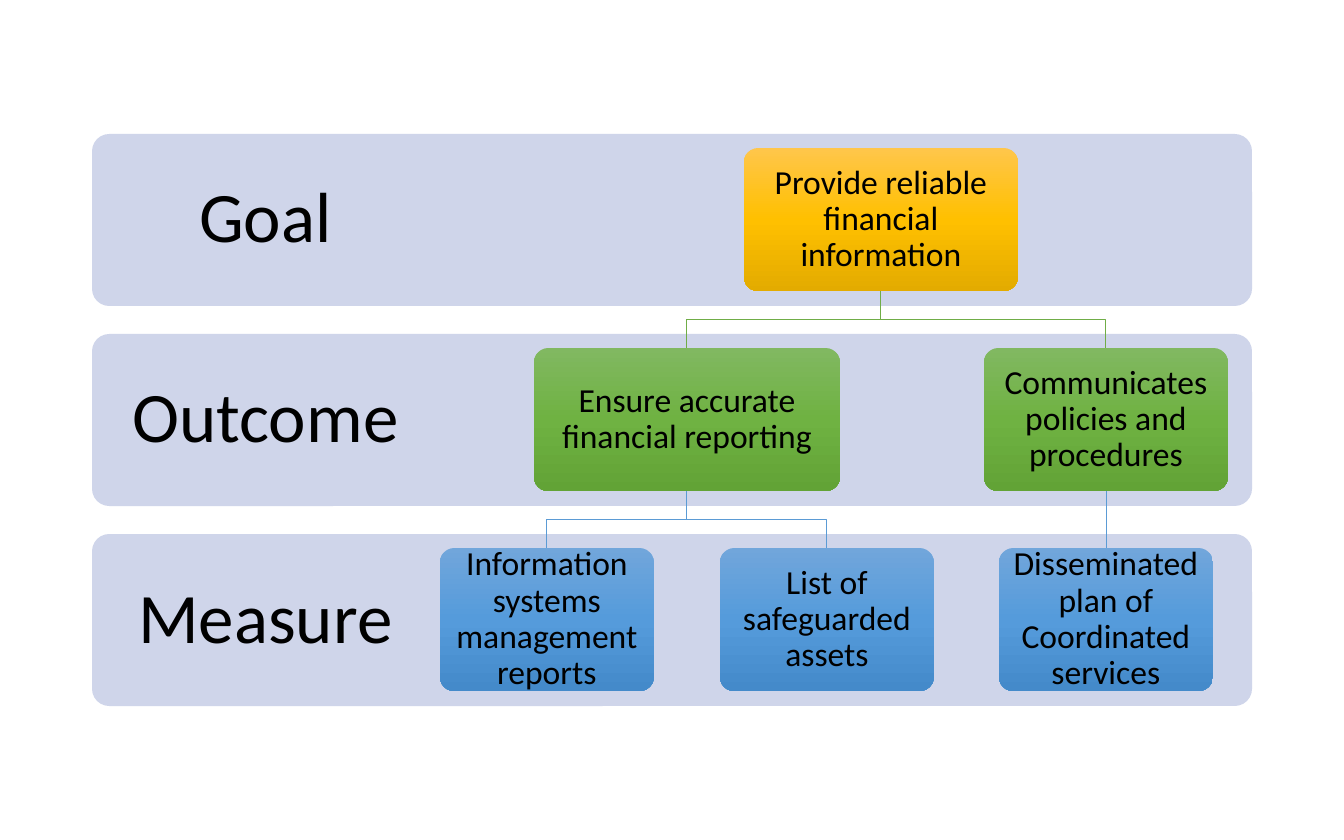
from copy import deepcopy

from lxml.etree import SubElement
from pptx import Presentation
from pptx.dml.color import RGBColor
from pptx.enum.shapes import MSO_CONNECTOR, MSO_SHAPE
from pptx.enum.text import MSO_ANCHOR, PP_ALIGN
from pptx.oxml.ns import qn
from pptx.util import Emu, Pt

EMU_PER_PX = 914400 / 134.4
COLORS = {"band": "CFD5EA", "text": "000000", "outcome_line": "70AD47", "measure_line": "5B9BD5"}
GRADIENTS = {
    "goal": ("FFC64B", "FFC000", "E3AB00"),
    "outcome": ("81B861", "6FB242", "62A336"),
    "measure": ("71A6DB", "559BDB", "448ACA"),
}

# Row geometry in px
BAND_LEFT, BAND_TOP, BAND_WIDTH, BAND_HEIGHT = 92, 134, 1160, 172
LABEL_WIDTH = 347
ROW_PITCH = 200
BOX_TOP, BOX_HEIGHT = 148, 143
LEVELS = ["goal", "outcome", "measure"]

# key: (level, centre x, width, text)
BOXES = {
    "information": ("goal", 881, 274, "Provide reliable financial information"),
    "reporting": ("outcome", 687, 306, "Ensure accurate financial reporting"),
    "policies": ("outcome", 1106, 244, "Communicates policies and procedures"),
    "reports": ("measure", 547, 214, "Information systems management reports"),
    "assets": ("measure", 827, 214, "List of safeguarded assets"),
    "plan": ("measure", 1106, 214, "Disseminated plan of Coordinated services"),
}
LINKS = [
    ("information", "reporting"), ("information", "policies"),
    ("reporting", "reports"), ("reporting", "assets"), ("policies", "plan"),
]


def px(value):
    return Emu(round(value * EMU_PER_PX))


def rgb(name):
    return RGBColor.from_string(COLORS[name])


def add_rounded(slide, left, top, width, height):
    rounded = slide.shapes.add_shape(
        MSO_SHAPE.ROUNDED_RECTANGLE, px(left), px(top), px(width), px(height))
    rounded.adjustments[0] = 0.1
    rounded.shadow.inherit = False
    rounded.line.fill.background()
    return rounded


def write_text(frame, text, size, inset):
    frame.word_wrap = True
    frame.vertical_anchor = MSO_ANCHOR.MIDDLE
    frame.margin_left = frame.margin_right = px(inset)
    frame.margin_top = frame.margin_bottom = px(inset)
    paragraph = frame.paragraphs[0]
    paragraph.text = text
    paragraph.alignment = PP_ALIGN.CENTER
    paragraph.line_spacing = 0.9
    paragraph.font.name = "Calibri"
    paragraph.font.size = Pt(size)
    paragraph.font.color.rgb = rgb("text")


def fill_gradient(fill, hex_stops):
    fill.gradient()
    fill.gradient_angle = 270
    # The default gradient has two stops; a third goes between them
    first_stop = fill._fill._gradFill.find(qn("a:gsLst"))[0]
    first_stop.addnext(deepcopy(first_stop))
    for stop, position, color in zip(fill.gradient_stops, (0, 0.5, 1), hex_stops):
        stop.position = position
        stop.color.rgb = RGBColor.from_string(color)


def add_band(slide, row, label):
    top = BAND_TOP + row * ROW_PITCH
    band = add_rounded(slide, BAND_LEFT, top, BAND_WIDTH, BAND_HEIGHT)
    band.fill.solid()
    band.fill.fore_color.rgb = rgb("band")
    title = slide.shapes.add_textbox(px(BAND_LEFT), px(top), px(LABEL_WIDTH), px(BAND_HEIGHT))
    write_text(title.text_frame, label, 38, 40)


def add_box(slide, level, centre, width, text):
    top = BOX_TOP + LEVELS.index(level) * ROW_PITCH
    box = add_rounded(slide, centre - width // 2, top, width, BOX_HEIGHT)
    fill_gradient(box.fill, GRADIENTS[level])
    write_text(box.text_frame, text, 18, 9)
    return box


def add_straight_link(slide, parent, child):
    link = slide.shapes.add_connector(MSO_CONNECTOR.STRAIGHT, 0, 0, 0, 0)
    link.begin_connect(parent, 2)
    link.end_connect(child, 0)
    SubElement(link._element.spPr, qn("a:effectLst"))
    return link


def add_elbow_link(slide, parent, child):
    start_x = parent.left + parent.width // 2
    start_y = parent.top + parent.height
    end_x = child.left + child.width // 2
    middle_y = (start_y + child.top) // 2
    builder = slide.shapes.build_freeform(start_x, start_y)
    builder.add_line_segments(
        [(start_x, middle_y), (end_x, middle_y), (end_x, child.top)], close=False)
    link = builder.convert_to_shape()
    link.fill.background()
    link.shadow.inherit = False
    return link


def add_link(slide, boxes, parent, child):
    aligned = BOXES[parent][1] == BOXES[child][1]
    draw = add_straight_link if aligned else add_elbow_link
    link = draw(slide, boxes[parent], boxes[child])
    link.line.color.rgb = rgb(BOXES[child][0] + "_line")
    link.line.width = Pt(0.5)


def main():
    presentation = Presentation()
    presentation.slide_width, presentation.slide_height = px(1344), px(840)
    slide = presentation.slides.add_slide(presentation.slide_layouts[6])

    # Level bands with their labels
    for row, level in enumerate(LEVELS):
        add_band(slide, row, level.capitalize())

    # Hierarchy boxes and the links between them
    boxes = {key: add_box(slide, *box) for key, box in BOXES.items()}
    for parent, child in LINKS:
        add_link(slide, boxes, parent, child)

    presentation.save("out.pptx")


if __name__ == "__main__":
    main()
